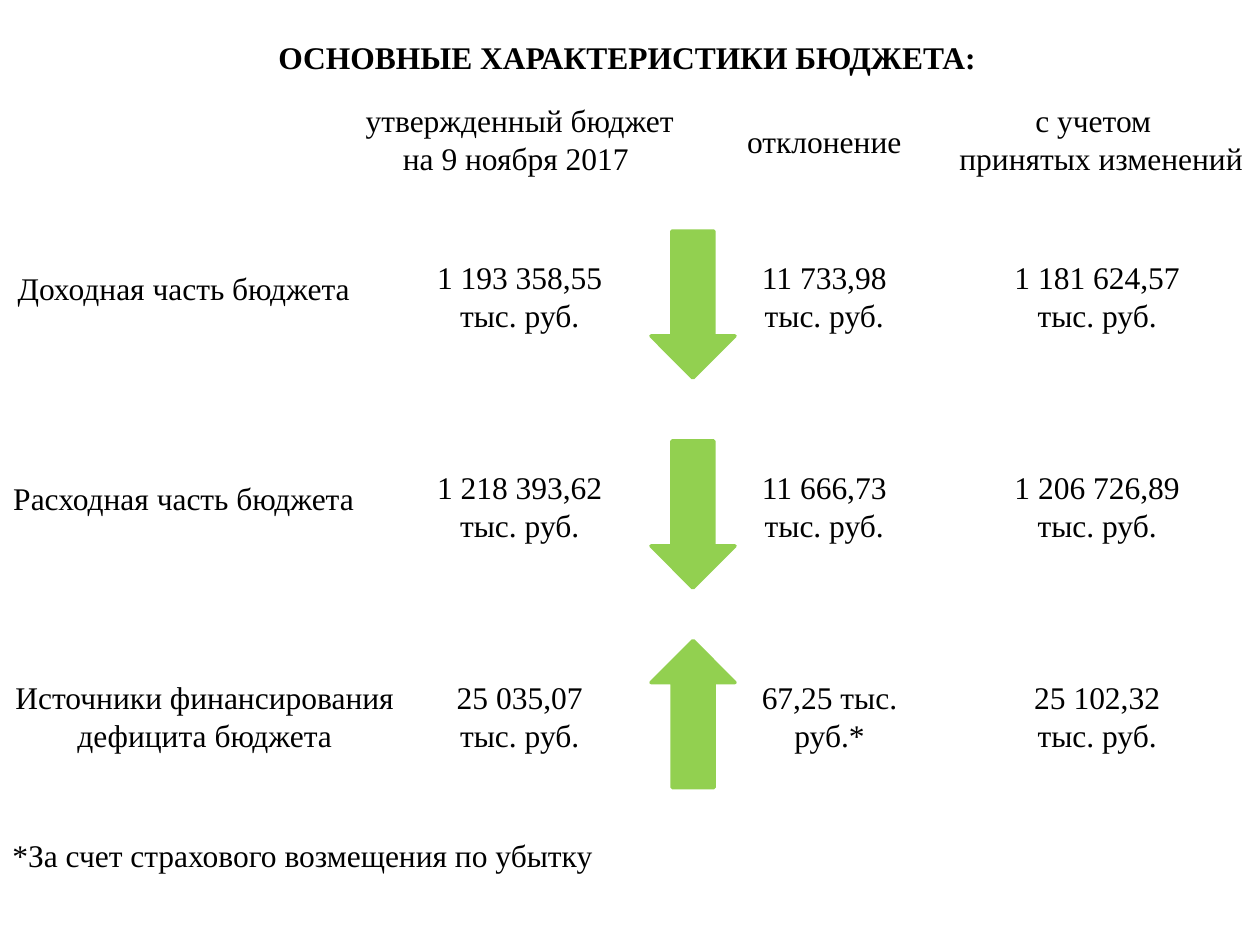
from dataclasses import dataclass

from pptx import Presentation
from pptx.dml.color import RGBColor
from pptx.enum.shapes import MSO_SHAPE as Shape
from pptx.enum.text import MSO_ANCHOR as Anchor
from pptx.enum.text import MSO_AUTO_SIZE as Fit
from pptx.enum.text import PP_ALIGN as Align
from pptx.util import Pt

PX = 9525  # EMU per px, 96 px to the inch
FONT = "Times New Roman"
COLORS = {"text": "000000", "arrow": "92D050"}
LINE, PAIR = 38, 68  # box heights for one and two lines of text


@dataclass
class Box:
    x: int
    y: int
    w: int
    h: int

    def emu(self) -> list[int]:
        return [n * PX for n in (self.x, self.y, self.w, self.h)]


@dataclass
class Row:
    top: int
    label: str
    place: Box
    before: str
    change: str
    after: str
    arrow: int
    turn: int = 0
    wide: int = 120


UNIT = "\nтыс. руб."
ROWS = [
    Row(192, "Доходная часть бюджета", Box(0, 200, 280, LINE),
        "1 193 358,55" + UNIT, "11 733,98" + UNIT, "1 181 624,57" + UNIT, 176),
    Row(352, "Расходная часть бюджета", Box(0, 360, 280, LINE),
        "1 218 393,62" + UNIT, "11 666,73" + UNIT, "1 206 726,89" + UNIT, 336),
    Row(512, "Источники финансирования дефицита бюджета", Box(0, 512, 312, PAIR),
        "25 035,07" + UNIT, "67,25 тыс. руб.*", "25 102,32" + UNIT, 488, 180, 128),
]
HEADS = [
    ("утвержденный бюджет на 9 ноября 2017 ", Box(264, 72, 264, PAIR)),
    ("отклонение", Box(552, 88, 152, LINE)),
    ("с учетом \n принятых изменений", Box(712, 72, 248, PAIR)),
]


def paint(fill, name: str) -> None:
    fill.solid()
    fill.fore_color.rgb = RGBColor.from_string(COLORS[name])


def write(shape, text: str, align=Align.CENTER, bold: bool = False,
          wrap: bool = True) -> None:
    frame = shape.text_frame
    frame.text = text
    frame.word_wrap = wrap
    frame.auto_size = Fit.SHAPE_TO_FIT_TEXT
    frame.vertical_anchor = Anchor.TOP
    for para in frame.paragraphs:
        para.alignment = align
        for run in para.runs:
            run.font.name = FONT
            run.font.size = Pt(18)
            run.font.bold = bold
            paint(run.font.fill, "text")


def add_text(slide, text: str, box: Box, align=Align.CENTER) -> None:
    write(slide.shapes.add_textbox(*box.emu()), text, align)


def add_arrow(slide, box: Box, turn: int) -> None:
    arrow = slide.shapes.add_shape(Shape.DOWN_ARROW, *box.emu())
    arrow.rotation = turn
    arrow.shadow.inherit = False
    paint(arrow.fill, "arrow")
    paint(arrow.line.fill, "arrow")
    arrow.line.width = Pt(2)


def add_row(slide, row: Row) -> None:
    add_text(slide, row.label, row.place)
    add_text(slide, row.before, Box(320, row.top, 152, PAIR))
    add_arrow(slide, Box(496, row.arrow, 64, 112), row.turn)
    add_text(slide, row.change, Box(568, row.top, row.wide, PAIR))
    add_text(slide, row.after, Box(760, row.top, 152, PAIR))


def main() -> None:
    deck = Presentation()
    deck.slide_width, deck.slide_height = 960 * PX, 720 * PX
    slide = deck.slides.add_slide(deck.slide_layouts[5])

    # Title
    title = slide.shapes.title
    title.left, title.top, title.width, title.height = Box(200, 24, 556, LINE).emu()
    write(title, "ОСНОВНЫЕ ХАРАКТЕРИСТИКИ БЮДЖЕТА:", bold=True, wrap=False)

    # Column heads and budget rows
    for text, box in HEADS:
        add_text(slide, text, box)
    for row in ROWS:
        add_row(slide, row)

    # Footnote
    add_text(slide, "*За счет страхового возмещения по убытку",
             Box(0, 632, 960, LINE), Align.JUSTIFY)
    deck.save("out.pptx")


if __name__ == "__main__":
    main()
